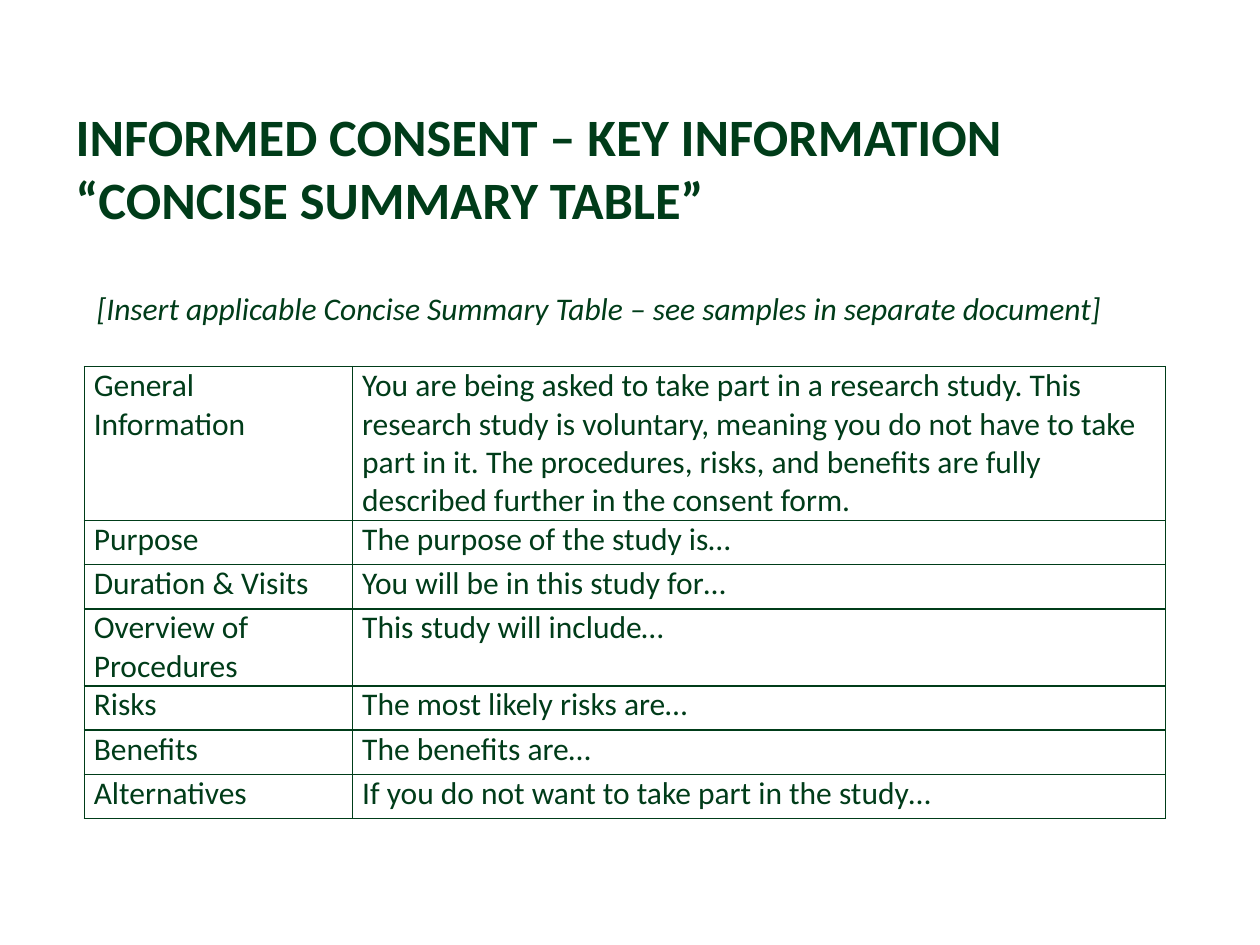
from lxml import etree
from pptx import Presentation
from pptx.dml.color import RGBColor
from pptx.enum.text import MSO_ANCHOR, PP_ALIGN
from pptx.oxml.ns import qn
from pptx.util import Pt

LEFT = PP_ALIGN.LEFT
TOP, MIDDLE = MSO_ANCHOR.TOP, MSO_ANCHOR.MIDDLE
TITLE_ONLY = 5
FONT = "Calibri"
COLORS = {"green": "003C19"}

TITLE = "INFORMED CONSENT – KEY INFORMATION\v“CONCISE SUMMARY TABLE”"
INSTRUCTION = "[Insert applicable Concise Summary Table – see samples in separate document]"
SUMMARY = [
    ("General Information",
     "You are being asked to take part in a research study. This research study is "
     "voluntary, meaning you do not have to take part in it. The procedures, risks, "
     "and benefits are fully described further in the consent form."),
    ("Purpose", "The purpose of the study is…"),
    ("Duration & Visits", "You will be in this study for…"),
    ("Overview of Procedures", "This study will include…"),
    ("Risks", "The most likely risks are…"),
    ("Benefits", "The benefits are…"),
    ("Alternatives", "If you do not want to take part in the study…"),
]
TABLE_LEFT, TABLE_TOP = 48.2, 209.5
COLUMN_WIDTHS = (153.4, 464.4)
FIRST_ROW, OTHER_ROWS = 76.3, 25.3


def write_text(frame, text, size, bold=False, italic=False):
    frame.text = text
    frame.word_wrap = True
    for paragraph in frame.paragraphs:
        paragraph.alignment = LEFT
        for run in paragraph.runs:
            font = run.font
            font.name, font.size = FONT, Pt(size)
            font.bold, font.italic = bold, italic
            font.color.rgb = RGBColor.from_string(COLORS["green"])


def add_title(slide):
    title = slide.shapes.title
    title.left, title.top, title.width, title.height = Pt(36), Pt(57), Pt(648), Pt(77)
    write_text(title.text_frame, TITLE, 30, bold=True)
    title.text_frame.vertical_anchor = MIDDLE


def add_instruction(slide):
    box = slide.shapes.add_textbox(Pt(TABLE_LEFT), Pt(161.8), Pt(sum(COLUMN_WIDTHS)), Pt(51))
    write_text(box.text_frame, INSTRUCTION, 18, italic=True)
    box.text_frame.vertical_anchor = TOP


def set_borders(cell):
    properties = cell._tc.get_or_add_tcPr()
    for position, side in enumerate(("a:lnL", "a:lnR", "a:lnT", "a:lnB")):
        line = etree.Element(qn(side), w=str(Pt(1)))
        fill = etree.SubElement(line, qn("a:solidFill"))
        etree.SubElement(fill, qn("a:srgbClr"), val=COLORS["green"])
        properties.insert(position, line)


def add_summary_table(slide):
    heights = [FIRST_ROW] + [OTHER_ROWS] * (len(SUMMARY) - 1)
    table = slide.shapes.add_table(
        len(SUMMARY), len(COLUMN_WIDTHS), Pt(TABLE_LEFT), Pt(TABLE_TOP),
        Pt(sum(COLUMN_WIDTHS)), Pt(sum(heights))).table
    table.first_row = table.horz_banding = False
    for column, width in zip(table.columns, COLUMN_WIDTHS):
        column.width = Pt(width)
    for row, height, texts in zip(table.rows, heights, SUMMARY):
        row.height = Pt(height)
        for cell, text in zip(row.cells, texts):
            cell.margin_left = cell.margin_right = Pt(5.4)
            cell.margin_top = cell.margin_bottom = 0
            cell.vertical_anchor = TOP
            cell.fill.background()
            set_borders(cell)
            write_text(cell.text_frame, text, 18)


def main():
    deck = Presentation()
    deck.slide_width, deck.slide_height = Pt(720), Pt(540)
    slide = deck.slides.add_slide(deck.slide_layouts[TITLE_ONLY])
    add_title(slide)
    add_summary_table(slide)
    add_instruction(slide)
    deck.save("out.pptx")


if __name__ == "__main__":
    main()
